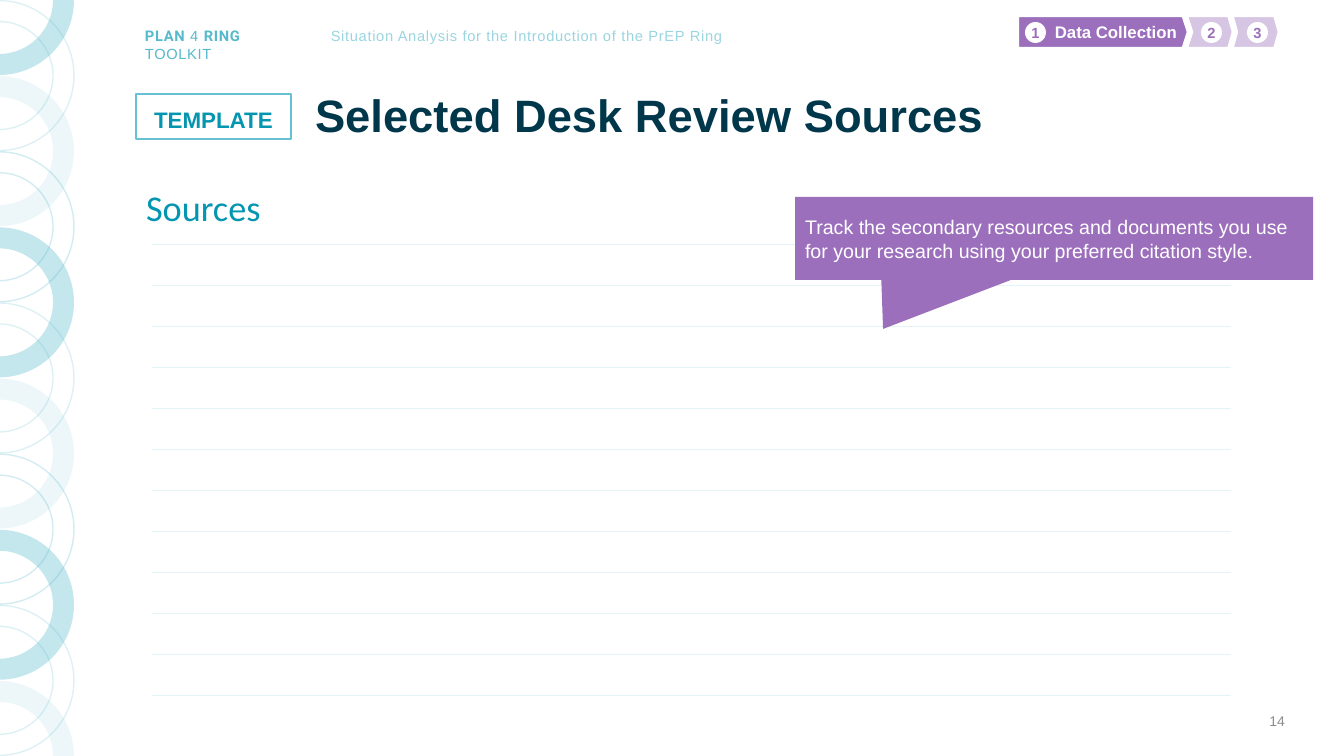
from lxml.etree import SubElement
from pptx import Presentation
from pptx.dml.color import RGBColor
from pptx.enum.shapes import MSO_SHAPE
from pptx.enum.text import MSO_ANCHOR, MSO_AUTO_SIZE, PP_ALIGN
from pptx.oxml.ns import qn
from pptx.util import Pt

PX = 914400 / 100.8
WIDE, HIGH = 1344, 756
WHITE, PURPLE, AQUA, TEAL, NAVY = "FFFFFF", "9C6FBD", "56B9CC", "0495B0", "00374B"
LEFT, MID, RIGHT = PP_ALIGN.LEFT, PP_ALIGN.CENTER, PP_ALIGN.RIGHT


def px(*sizes):
    return [round(size * PX) for size in sizes]


def color(code):
    return RGBColor.from_string(code)


def write(shape, text, size=12, ink=WHITE, font="Arial", bold=False, align=LEFT,
          anchor=MSO_ANCHOR.TOP, wrap=True, lead=None, track=0, inset=(10, 5, 10, 5)):
    frame = shape.text_frame
    frame.word_wrap = wrap
    frame.auto_size = MSO_AUTO_SIZE.NONE
    frame.vertical_anchor = anchor
    (frame.margin_left, frame.margin_top,
     frame.margin_right, frame.margin_bottom) = px(*inset)
    line = frame.paragraphs[0]
    line.alignment = align
    line.line_spacing = lead
    line.space_before = Pt(0)
    parts = [(text, font, bold)] if isinstance(text, str) else text
    for part, face, heavy in parts:
        if part == "\n":
            line.add_line_break()
            continue
        run = line.add_run()
        run.text = part
        run.font.name, run.font.size, run.font.bold = face, Pt(size), heavy
        run.font.color.rgb = color(ink)
        if track:
            run._r.get_or_add_rPr().set("spc", str(track))


def label(slide, box, text, **style):
    write(slide.shapes.add_textbox(*px(*box)), text, **style)


def dress(shape, fill=None, line=None, width=1, fade=None):
    shape.shadow.inherit = False
    if fill:
        shape.fill.solid()
        shape.fill.fore_color.rgb = color(fill)
    else:
        shape.fill.background()
    if line:
        shape.line.color.rgb = color(line)
        shape.line.width = Pt(width)
    else:
        shape.line.fill.background()
    if fade:
        tone = next(shape._element.spPr.iter(qn("a:srgbClr")))
        SubElement(tone, qn("a:alpha"), val=str(fade * 1000))


def block(slide, kind, box, adjust=(), **look):
    shape = slide.shapes.add_shape(kind, *px(*box))
    for spot, value in enumerate(adjust):
        shape.adjustments[spot] = value
    dress(shape, **look)
    return shape


def border(slide):
    looks = [dict(fill=AQUA, fade=35), dict(line=AQUA, fade=20),
             dict(fill=AQUA, fade=10), dict(line=AQUA, fade=25)]
    for step in range(11):
        first = 0 if step == 0 else 270
        last = 0 if step == 10 else 90
        box = (-76, step * HIGH / 10 - 75, 150, 150)
        block(slide, MSO_SHAPE.BLOCK_ARC, box, (first * 0.6, last * 0.6, 0.14),
              **looks[step % 4])


def stage(slide, left, width, number, tip, fade=None, text=""):
    plate = block(slide, MSO_SHAPE.PENTAGON, (left, 14, width, 36), (tip,),
                  fill=PURPLE, line=WHITE, width=4.5, fade=fade)
    if text:
        write(plate, text, bold=True, align=RIGHT, anchor=MSO_ANCHOR.MIDDLE)
    inset = 18 if fade else 9
    dot = block(slide, MSO_SHAPE.OVAL, (left + inset, 22, 21, 21), fill=WHITE)
    write(dot, number, size=10.5, ink=PURPLE, bold=True, align=MID,
          anchor=MSO_ANCHOR.MIDDLE, inset=(0, 0, 0, 0))


def rule(cell, side, shown):
    edge = SubElement(cell._tc.get_or_add_tcPr(), qn("a:" + side), w=str(Pt(0.5)))
    if shown:
        fill = SubElement(edge, qn("a:solidFill"))
        SubElement(fill, qn("a:srgbClr"), val="E3F3F7")
    else:
        SubElement(edge, qn("a:noFill"))


def lines(slide, count, box):
    table = slide.shapes.add_table(count, 1, *px(*box)).table
    table.first_row = table.horz_banding = False
    for row in range(count):
        cell = table.cell(row, 0)
        shown = dict(lnL=False, lnR=False, lnT=row > 0, lnB=row < count - 1)
        for side, seen in shown.items():
            rule(cell, side, seen)
        cell.fill.background()


def holder(shape, box, text, **style):
    shape.left, shape.top, shape.width, shape.height = px(*box)
    form = shape.text_frame.paragraphs[0]._p.get_or_add_pPr()
    form.set("marL", "0")
    form.set("indent", "0")
    SubElement(form, qn("a:buNone"))
    write(shape, text, lead=0.9, **style)


def main():
    deck = Presentation()
    deck.slide_width, deck.slide_height = px(WIDE, HIGH)
    slide = deck.slides.add_slide(deck.slide_layouts[1])
    title, body = slide.placeholders

    label(slide, (135, 22, 185, 28),
          [("PLAN", "Roboto", True), (" 4 ", "Arial", False), ("RING", "Roboto", True),
           ("\n", "Arial", False), ("TOOLKIT", "Arial", False)],
          size=10.5, ink=AQUA, track=50, wrap=False)
    label(slide, (317, 22, 420, 28),
          "Situation Analysis for the Introduction of the PrEP Ring",
          size=10.5, ink="9AD5E0", track=50, align=MID)
    border(slide)

    stage(slide, 1229, 52, "3", 0.14, fade=40)
    stage(slide, 1183, 52, "2", 0.14, fade=40)
    stage(slide, 1016, 174, "1", 0.16, text="Data Collection")

    badge = block(slide, MSO_SHAPE.RECTANGLE, (136, 94, 155, 45),
                  fill=WHITE, line="67C0D4")
    write(badge, "TEMPLATE", size=16, ink=TEAL, bold=True, align=MID,
          wrap=False, lead=1.15, inset=(10, 8, 10, 0))
    lines(slide, 13, (152, 203, 1079, 533))

    holder(title, (305, 90, 948, 56), "Selected Desk Review Sources",
           size=32.4, ink=NAVY, bold=True, anchor=MSO_ANCHOR.MIDDLE)
    holder(body, (136, 185, 1119, 52), "Sources",
           size=25.9, ink=TEAL, font="Calibri")
    label(slide, (993, 701, 302, 40), "14", size=10, ink="8C8C8C",
          align=RIGHT, anchor=MSO_ANCHOR.MIDDLE)

    note = block(slide, MSO_SHAPE.RECTANGULAR_CALLOUT, (795, 197, 518, 83),
                 (-0.33, 1.09), fill=PURPLE)
    write(note, "Track the secondary resources and documents you use for your "
          "research using your preferred citation style.",
          size=14, anchor=MSO_ANCHOR.MIDDLE)
    deck.save("out.pptx")


if __name__ == "__main__":
    main()
